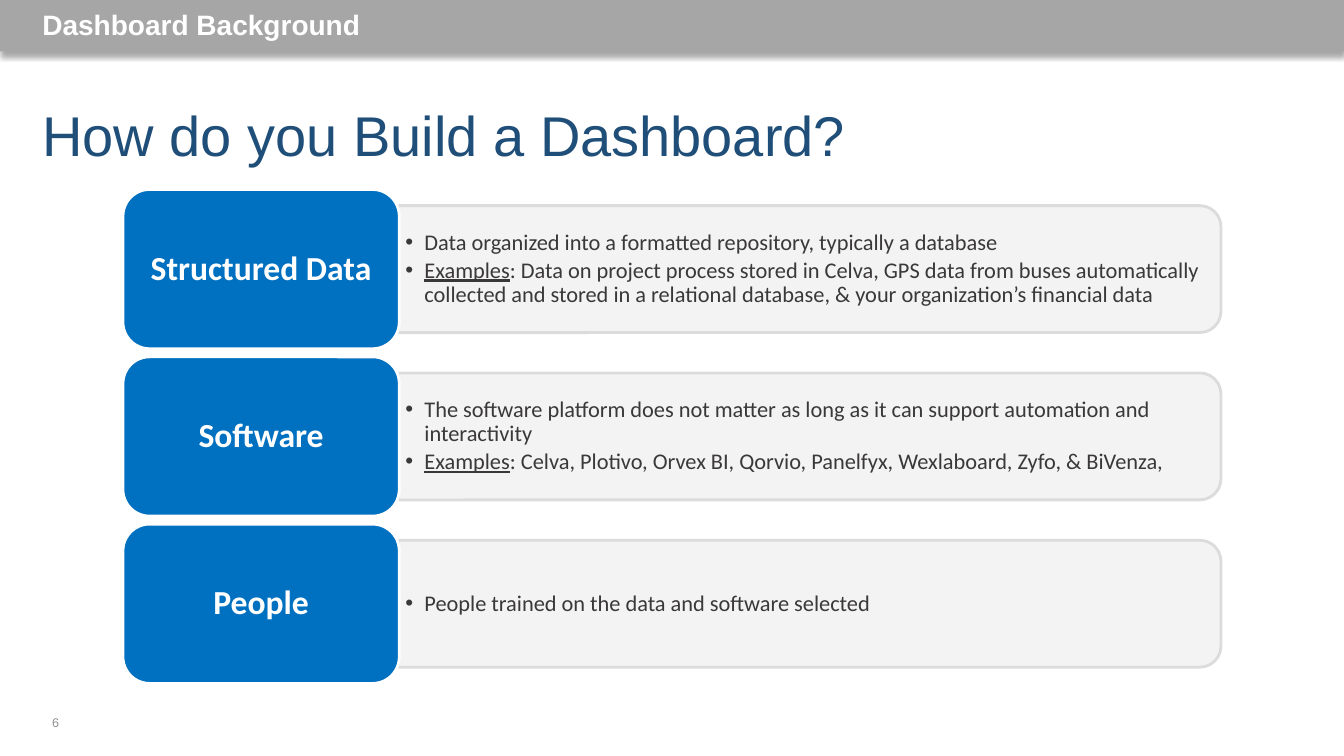
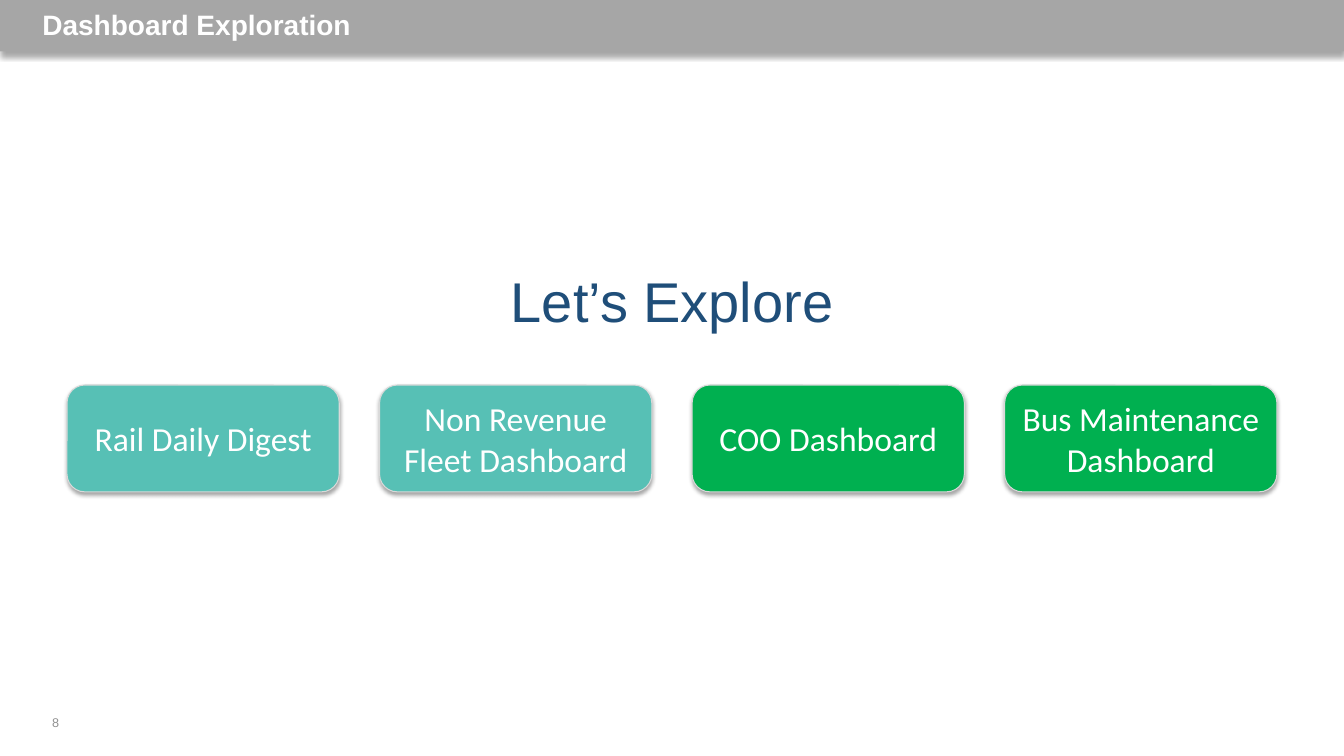
from dataclasses import dataclass
from typing import Optional

from lxml import etree
from pptx import Presentation
from pptx.dml.color import RGBColor
from pptx.enum.shapes import MSO_SHAPE
from pptx.enum.text import MSO_ANCHOR, PP_ALIGN
from pptx.oxml.ns import qn
from pptx.util import Inches, Pt

RECT = MSO_SHAPE.RECTANGLE
ROUNDED = MSO_SHAPE.ROUNDED_RECTANGLE
TWO_ROUNDED = MSO_SHAPE.ROUND_2_SAME_RECTANGLE
TOP, MIDDLE = MSO_ANCHOR.TOP, MSO_ANCHOR.MIDDLE
LEFT, CENTER = PP_ALIGN.LEFT, PP_ALIGN.CENTER


@dataclass(frozen=True)
class Theme:
    heading_font: str = "Arial"
    body_font: str = "Calibri"
    band: str = "A6A6A6"
    title: str = "1F4E79"
    white: str = "FFFFFF"
    number: str = "919191"
    panel: str = "F2F2F2"
    border: str = "D9D9D9"
    body: str = "3A3838"
    blue: str = "0070C0"
    teal: str = "57C0B5"
    green: str = "00B050"
    title_size: int = 40
    section_size: int = 20
    label_size: int = 24
    body_size: int = 16
    number_size: int = 9


@dataclass(frozen=True)
class Box:
    left: float
    top: float
    width: float
    height: float

    def lengths(self) -> tuple:
        return tuple(Inches(v) for v in (self.left, self.top, self.width, self.height))


@dataclass(frozen=True)
class TextStyle:
    font: str
    size: int
    color: str
    bold: bool = False
    align: PP_ALIGN = LEFT


@dataclass(frozen=True)
class Shadow:
    blur: float
    distance: float
    opacity: int = 35


@dataclass(frozen=True)
class Bullet:
    text: str
    lead: str = ""  # underlined opening word


@dataclass(frozen=True)
class Ingredient:
    label: str
    bullets: tuple


@dataclass(frozen=True)
class DashboardButton:
    label: str
    color: str


THEME = Theme()
SLIDE_WIDTH, SLIDE_HEIGHT = 13.33, 7.5
HEADING_INSETS = (0.13, 0.07)
BODY_INSETS = (0.07, 0.03)
DEFAULT_INSETS = (0.1, 0.05)
BAND_SHADOW = Shadow(4.2, 3)
BUTTON_SHADOW = Shadow(3.1, 1.8)

SECTION = TextStyle(THEME.heading_font, THEME.section_size, THEME.white, bold=True)
NUMBER = TextStyle(THEME.heading_font, THEME.number_size, THEME.number)
BODY = TextStyle(THEME.body_font, THEME.body_size, THEME.body)
TILE_LABEL = TextStyle(THEME.body_font, THEME.label_size, THEME.white, True, CENTER)
BUTTON_LABEL = TextStyle(THEME.body_font, THEME.label_size, THEME.white, False, CENTER)

INGREDIENTS = (
    Ingredient("Structured Data", (
        Bullet("Data organized into a formatted repository, typically a database"),
        Bullet(": Data on project process stored in Celva, GPS data from buses "
               "automatically collected and stored in a relational database, "
               "& your organization’s financial data", "Examples"),
    )),
    Ingredient("Software", (
        Bullet("The software platform does not matter as long as it can support "
               "automation and interactivity"),
        Bullet(": Celva, Plotivo, Orvex BI, Qorvio, Panelfyx, Wexlaboard, Zyfo, "
               "& BiVenza,", "Examples"),
    )),
    Ingredient("People", (
        Bullet("People trained on the data and software selected"),
    )),
)

BUTTONS = (
    DashboardButton("Rail Daily Digest", THEME.teal),
    DashboardButton("Non Revenue Fleet Dashboard", THEME.teal),
    DashboardButton("COO Dashboard", THEME.green),
    DashboardButton("Bus Maintenance Dashboard", THEME.green),
)


# Shared drawing helpers
def rgb(color: str) -> RGBColor:
    return RGBColor.from_string(color)


def style_paragraph(paragraph, style: TextStyle) -> None:
    paragraph.alignment = style.align
    font = paragraph.font
    font.name, font.size, font.bold = style.font, Pt(style.size), style.bold
    font.color.rgb = rgb(style.color)


def prepare_frame(frame, insets: tuple, anchor: MSO_ANCHOR) -> None:
    frame.word_wrap = True
    frame.vertical_anchor = anchor
    frame.margin_left = frame.margin_right = Inches(insets[0])
    frame.margin_top = frame.margin_bottom = Inches(insets[1])


def write_text(holder, text: str, style: TextStyle, insets: tuple = DEFAULT_INSETS,
               anchor: MSO_ANCHOR = MIDDLE) -> None:
    prepare_frame(holder.text_frame, insets, anchor)
    paragraph = holder.text_frame.paragraphs[0]
    paragraph.text = text
    style_paragraph(paragraph, style)


def add_text(slide, box: Box, text: str, style: TextStyle,
             insets: tuple = DEFAULT_INSETS, anchor: MSO_ANCHOR = MIDDLE) -> None:
    write_text(slide.shapes.add_textbox(*box.lengths()), text, style, insets, anchor)


def add_panel(slide, kind: MSO_SHAPE, box: Box, fill: str, border: str = "",
              border_width: float = 0, shadow: Optional[Shadow] = None):
    shape = slide.shapes.add_shape(kind, *box.lengths())
    shape.fill.solid()
    shape.fill.fore_color.rgb = rgb(fill)
    if border:
        shape.line.color.rgb = rgb(border)
        shape.line.width = Pt(border_width)
    else:
        shape.line.fill.background()
    shape.shadow.inherit = False
    if shadow:
        effects = shape._element.spPr.find(qn("a:effectLst"))
        outer = etree.SubElement(
            effects, qn("a:outerShdw"), blurRad=str(Pt(shadow.blur)),
            dist=str(Pt(shadow.distance)), dir="5400000", rotWithShape="0")
        black = etree.SubElement(outer, qn("a:srgbClr"), val="000000")
        etree.SubElement(black, qn("a:alpha"), val=str(shadow.opacity * 1000))
    return shape


def make_translucent(shape, opacity: int) -> None:
    for color in shape._element.spPr.iter(qn("a:srgbClr")):
        etree.SubElement(color, qn("a:alpha"), val=str(opacity * 1000))


def add_bullets(slide, box: Box, bullets: tuple) -> None:
    frame = slide.shapes.add_textbox(*box.lengths()).text_frame
    prepare_frame(frame, BODY_INSETS, MIDDLE)
    indent = Inches(0.19)
    for index, bullet in enumerate(bullets):
        paragraph = frame.add_paragraph() if index else frame.paragraphs[0]
        paragraph.line_spacing = 0.9
        paragraph.space_after = Pt(0.15 * BODY.size)
        properties = paragraph._p.get_or_add_pPr()
        properties.set("marL", str(indent))
        properties.set("indent", str(-indent))
        etree.SubElement(properties, qn("a:buFont"), typeface="Arial")
        etree.SubElement(properties, qn("a:buChar"), char="•")
        if bullet.lead:
            lead = paragraph.add_run()
            lead.text = bullet.lead
            lead.font.underline = True
        paragraph.add_run().text = bullet.text
        style_paragraph(paragraph, BODY)


def add_base_slide(deck, section: str, title: str, title_top: float,
                   title_align: PP_ALIGN, number: int):
    slide = deck.slides.add_slide(deck.slide_layouts[6])
    add_text(slide, Box(0.42, 6.97, 3, 0.4), str(number), NUMBER)
    add_panel(slide, RECT, Box(0, 0, SLIDE_WIDTH, 0.51), THEME.band, shadow=BAND_SHADOW)
    title_style = TextStyle(THEME.heading_font, THEME.title_size, THEME.title,
                            align=title_align)
    add_text(slide, Box(0.29, title_top, 12.75, 1.06), title, title_style, HEADING_INSETS)
    add_text(slide, Box(0.29, 0, 7.5, 0.49), section, SECTION, HEADING_INSETS, TOP)
    return slide


# Slide: what a dashboard is built from
def add_ingredient(slide, ingredient: Ingredient, tile: Box) -> None:
    panel_length, panel_height = 8.16, 1.26
    panel_left = tile.left + tile.width - 0.01
    middle = tile.top + tile.height / 2
    # The panel stands upright and is turned so its round corners face right
    upright = Box(panel_left + (panel_length - panel_height) / 2,
                  middle - panel_length / 2, panel_height, panel_length)
    panel = add_panel(slide, TWO_ROUNDED, upright, THEME.panel, THEME.border, 2)
    panel.rotation = 90
    make_translucent(panel, 90)
    add_bullets(slide, Box(panel_left, middle - 0.57, 8.1, 1.14), ingredient.bullets)
    label_tile = add_panel(slide, ROUNDED, tile, THEME.blue, THEME.white, 2)
    write_text(label_tile, ingredient.label, TILE_LABEL)
    label_tile.text_frame.paragraphs[0].line_spacing = 0.9


def build_ingredients_slide(deck) -> None:
    slide = add_base_slide(deck, "Dashboard Background",
                           "How do you Build a Dashboard?", 0.8, LEFT, 6)
    tile_height, gap = 1.58, 0.08
    for row, ingredient in enumerate(INGREDIENTS):
        top = 1.88 + row * (tile_height + gap)
        add_ingredient(slide, ingredient, Box(1.22, top, 2.74, tile_height))


# Slide: dashboards to explore
def build_exploration_slide(deck) -> None:
    slide = add_base_slide(deck, "Dashboard Exploration", "Let’s Explore", 2.45, CENTER, 8)
    width, gap = 2.7, 0.4
    row_width = len(BUTTONS) * (width + gap) - gap
    first_left = (SLIDE_WIDTH - row_width) / 2
    for column, button in enumerate(BUTTONS):
        box = Box(first_left + column * (width + gap), 3.82, width, 1.06)
        face = add_panel(slide, ROUNDED, box, button.color, THEME.border, 0.75,
                         BUTTON_SHADOW)
        write_text(face, button.label, BUTTON_LABEL)


def main() -> None:
    deck = Presentation()
    deck.slide_width, deck.slide_height = Inches(SLIDE_WIDTH), Inches(SLIDE_HEIGHT)
    build_ingredients_slide(deck)
    build_exploration_slide(deck)
    deck.save("out.pptx")


if __name__ == "__main__":
    main()
